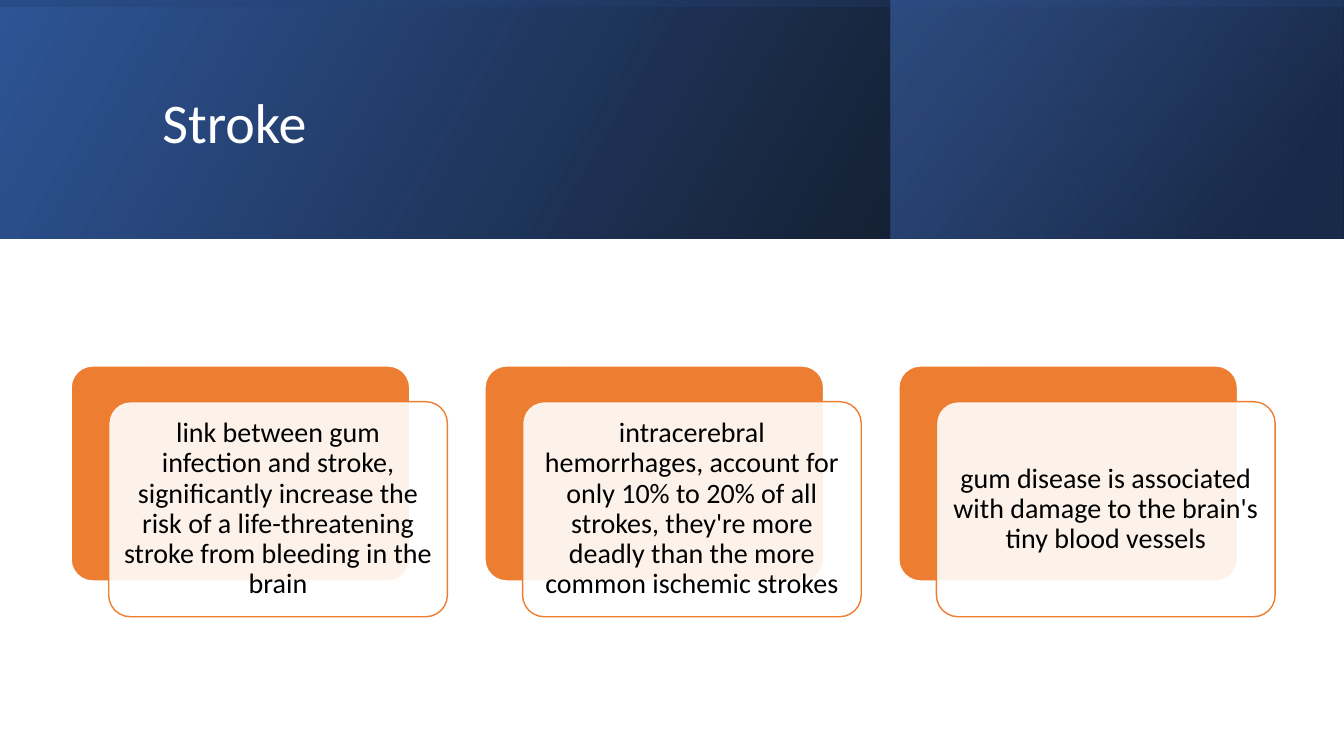
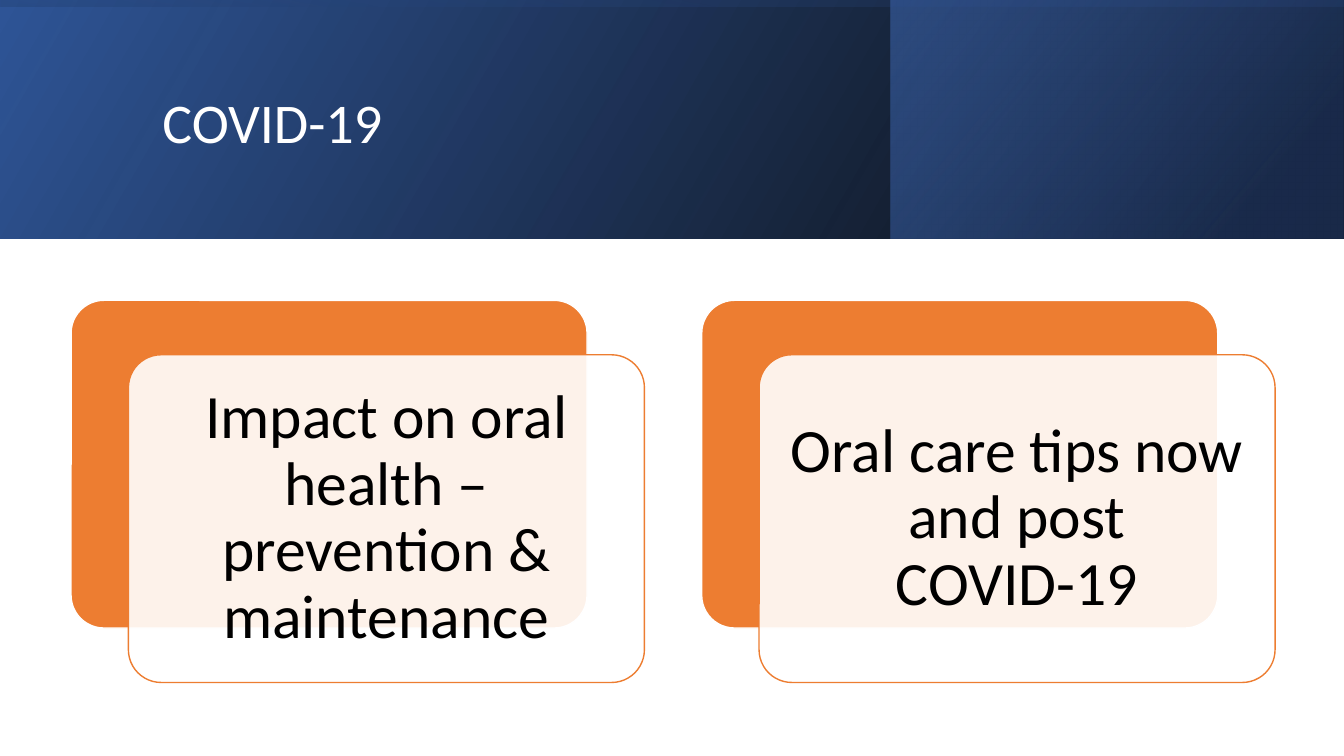
from dataclasses import dataclass
from lxml.etree import SubElement as Sub
from pptx import Presentation
from pptx.dml.color import RGBColor as RGB
from pptx.enum.shapes import MSO_SHAPE as Kind
from pptx.enum.text import MSO_ANCHOR as Anchor, PP_ALIGN as Align
from pptx.oxml.ns import qn
from pptx.util import Pt


@dataclass(frozen=True)
class Theme:
    font: str = "Calibri"
    white: str = "FFFFFF"
    black: str = "000000"
    orange: str = "ED7D31"
    blue: str = "2F5597"
    navy: str = "203864"
    sky: str = "4472C4"
    title: int = 40
    wide: int = 960
    high: int = 540
    band: float = 170.64


T = Theme()


# Shared helpers
def fade(shape, *alphas):
    """Set the opacity, in percent, of each fill colour in turn."""
    tints = shape._element.spPr.iter(qn("a:srgbClr"))
    for tint, alpha in zip(tints, alphas):
        Sub(tint, qn("a:alpha")).set("val", str(alpha * 1000))


def block(shapes, kind, box):
    shape = shapes.add_shape(kind, *map(Pt, box))
    shape.shadow.inherit = False
    return shape


def write(shape, text, size, color, align, inset=None):
    frame = shape.text_frame
    frame.word_wrap = True
    frame.vertical_anchor = Anchor.MIDDLE
    if inset is not None:
        frame.margin_left = frame.margin_right = Pt(inset)
        frame.margin_top = frame.margin_bottom = Pt(inset)
    para = frame.paragraphs[0]
    para.text = text
    para.alignment = align
    para.line_spacing = 0.9
    font = para.font
    font.name, font.size = T.font, Pt(size)
    font.color.rgb = RGB.from_string(color)


# Header
def blend(slide, box, angle, stops, turn=0):
    """Draw a mirrored gradient panel; stops are (place, colour, opacity)."""
    panel = block(slide.shapes, Kind.RECTANGLE, box)
    panel.line.fill.background()
    panel.rotation = turn
    panel._element.spPr.find(qn("a:xfrm")).set("flipH", "1")
    panel.fill.gradient()
    panel.fill.gradient_angle = 360 - angle
    for stop, (place, color, _) in zip(panel.fill.gradient_stops, stops):
        stop.position = place / 100
        stop.color.rgb = RGB.from_string(color)
    fade(panel, *(alpha for _, _, alpha in stops))


def header(slide, title):
    blend(slide, (0, 0, T.wide, T.band), 330,
          [(0, T.black, 96), (100, T.blue, 100)])
    blend(slide, (636.5, 0, T.wide - 637, T.band), 320,
          [(19, T.navy, 68), (100, T.sky, 48)])
    # Upright panel, turned to lie over the whole band
    shift = (T.wide - T.band) / 2
    blend(slide, (shift, -shift, T.band, T.wide), 350,
          [(23, T.blue, 16), (99, T.black, 45)], turn=270)
    box = slide.shapes.add_textbox(*map(Pt, (109, 27.5, 765, 124)))
    write(box, title, T.title, T.white, Align.LEFT)


# Cards
def card(slide, left, top, wide, high, step, drop, text, size):
    shapes = slide.shapes.add_group_shape().shapes
    back = block(shapes, Kind.ROUNDED_RECTANGLE, (left, top, wide, high))
    front = block(shapes, Kind.ROUNDED_RECTANGLE,
                  (left + step, top + drop, wide, high))
    for shape, fill, line in ((back, T.orange, T.white),
                              (front, T.white, T.orange)):
        shape.adjustments[0] = 0.1
        shape.fill.solid()
        shape.fill.fore_color.rgb = RGB.from_string(fill)
        shape.line.color.rgb = RGB.from_string(line)
        shape.line.width = Pt(1)
    fade(front, 90)
    write(front, text, size, T.black, Align.CENTER, inset=0.3 * size)


def cards(slide, texts, size):
    """Fill the row: step and gap are each a ninth of a card's width."""
    left, span, middle = 50.8, 860, 351
    wide = span * 9 / (11 * len(texts) - 1)
    high, step, drop = 0.635 * wide, wide / 9, 0.1055 * wide
    top = middle - (high + drop) / 2
    for i, text in enumerate(texts):
        card(slide, left + i * (wide + 2 * step), top,
             wide, high, step, drop, text, size)


PAGES = [
    ("Stroke", 20, [
        "link between gum infection and stroke, significantly increase "
        "the risk of a life-threatening stroke from bleeding in the brain",
        "intracerebral hemorrhages, account for only 10% to 20% of all "
        "strokes, they're more deadly than the more common ischemic strokes",
        "gum disease is associated with damage to the brain's tiny "
        "blood vessels",
    ]),
    ("COVID-19", 44, [
        "Impact on oral health – prevention & maintenance",
        "Oral care tips now and post COVID-19",
    ]),
]


def main():
    deck = Presentation()
    deck.slide_width, deck.slide_height = Pt(T.wide), Pt(T.high)
    for title, size, texts in PAGES:
        slide = deck.slides.add_slide(deck.slide_layouts[6])
        header(slide, title)
        cards(slide, texts, size)
    deck.save("out.pptx")


if __name__ == "__main__":
    main()
